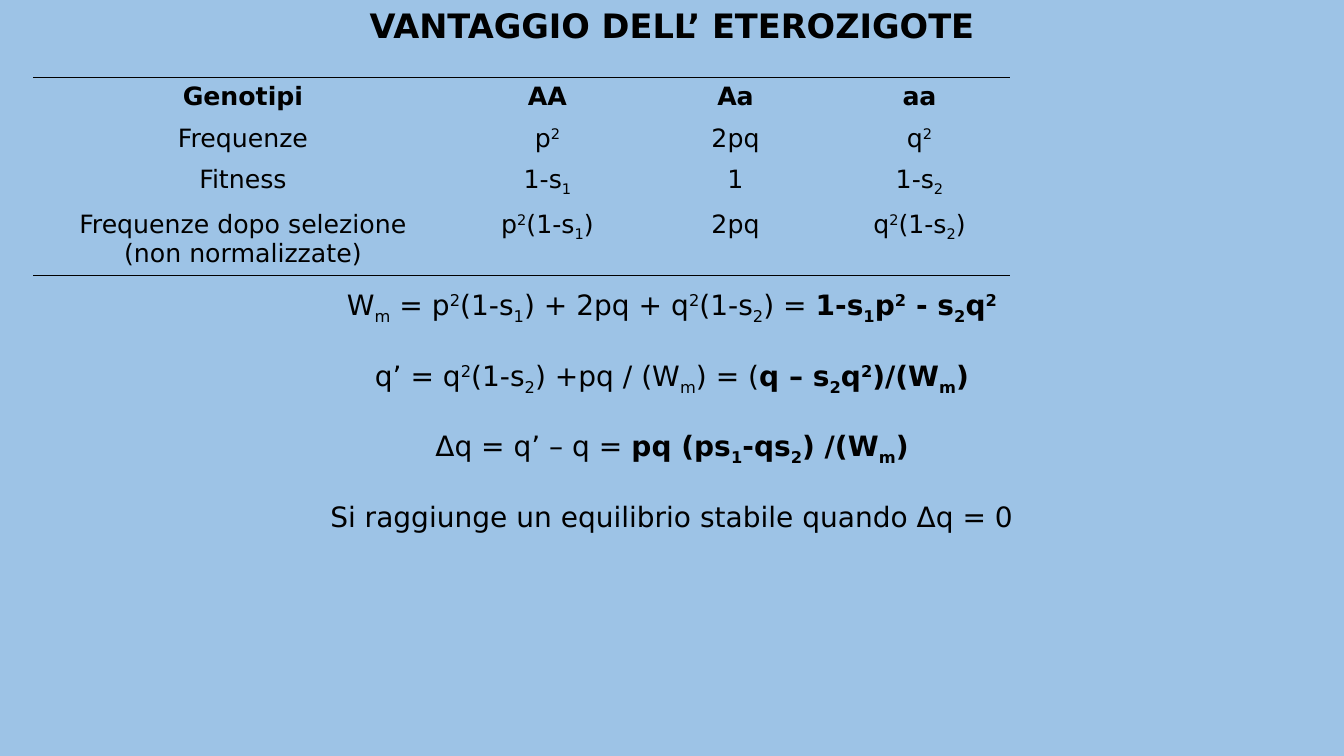
import pptx
import pptx.dml.color
import pptx.enum.text
import pptx.oxml
import pptx.oxml.ns
import pptx.util

Inches, Pt = pptx.util.Inches, pptx.util.Pt

# Markup: ^ raises the next character, _ lowers it, * switches bold on or off.
TITLE = "*VANTAGGIO DELL’ ETEROZIGOTE"
GENOTYPES = [
    ["*Genotipi", "*AA", "*Aa", "*aa"],
    ["Frequenze", "p^2", "2pq", "q^2"],
    ["Fitness", "1-s_1", "1", "1-s_2"],
    ["Frequenze dopo selezione\n(non normalizzate)", "p^2(1-s_1)", "2pq", "q^2(1-s_2)"],
]
EQUATIONS = [
    "W_m = p^2(1-s_1) + 2pq + q^2(1-s_2) = *1-s_1p^2 - s_2q^2",
    "q’ = q^2(1-s_2) +pq / (W_m) = (*q – s_2q^2)/(W_m)",
    "Δq = q’ – q = *pq (ps_1-qs_2) /(W_m)",
    "Si raggiunge un equilibrio stabile quando Δq = 0",
]
THEME = {
    "background": "9DC3E6", "ink": "000000", "font": "DejaVu Sans",
    "title": 24, "table": 18, "equation": 20, "rule": 1, "equation_gap": 23.3,
}
SLIDE_WIDTH, SLIDE_HEIGHT = 13.33, 7.5
COLUMN_WIDTHS = [4.16, 1.88, 1.85, 1.8]
ROW_HEIGHT = 0.41
RULED_SIDES = {0: ("T", "B"), len(GENOTYPES) - 1: ("B",)}
BASELINES = {"^": "30000", "_": "-25000"}


def split_markup(line):
    """Return (text, bold, baseline) pieces of one marked-up line."""
    pieces, bold, baseline = [], False, None
    for char in line:
        if char == "*":
            bold = not bold
        elif char in BASELINES:
            baseline = BASELINES[char]
        else:
            if pieces and baseline is None and pieces[-1][1:] == (bold, None):
                pieces[-1] = (pieces[-1][0] + char, bold, None)
            else:
                pieces.append((char, bold, baseline))
            baseline = None
    return pieces


def write_lines(frame, lines, size, gap=0):
    for index, line in enumerate(lines):
        paragraph = frame.paragraphs[0] if index == 0 else frame.add_paragraph()
        paragraph.alignment = pptx.enum.text.PP_ALIGN.CENTER
        if index and gap:
            paragraph.space_before = Pt(gap)
        for text, bold, baseline in split_markup(line):
            run = paragraph.add_run()
            run.text = text
            formats = {"name": THEME["font"], "size": Pt(size), "bold": bold}
            for key, value in formats.items():
                setattr(run.font, key, value)
            run.font.color.rgb = pptx.dml.color.RGBColor.from_string(THEME["ink"])
            if baseline:
                run.font._element.set("baseline", baseline)


def add_text(slide, top, height, lines, size, gap=0):
    box = slide.shapes.add_textbox(
        Inches(0), Inches(top), Inches(SLIDE_WIDTH), Inches(height))
    box.text_frame.word_wrap = True
    write_lines(box.text_frame, lines, size, gap)


def rule_cell(cell, ruled):
    properties = cell._tc.get_or_add_tcPr()
    for side in "LRTB":
        paint = "<a:noFill/>"
        if side in ruled:
            paint = f'<a:solidFill><a:srgbClr val="{THEME["ink"]}"/></a:solidFill>'
        properties.append(pptx.oxml.parse_xml(
            f'<a:ln{side} {pptx.oxml.ns.nsdecls("a")} w="{Pt(THEME["rule"])}">'
            f"{paint}</a:ln{side}>"))
    cell.fill.background()


def add_genotypes(slide):
    table = slide.shapes.add_table(
        len(GENOTYPES), len(COLUMN_WIDTHS), Inches(0.33), Inches(0.77),
        Inches(sum(COLUMN_WIDTHS)), Inches(ROW_HEIGHT * len(GENOTYPES))).table
    table.first_row = table.horz_banding = False
    for column, width in zip(table.columns, COLUMN_WIDTHS):
        column.width = Inches(width)
    for r, values in enumerate(GENOTYPES):
        table.rows[r].height = Inches(ROW_HEIGHT)
        for c, value in enumerate(values):
            cell = table.cell(r, c)
            write_lines(cell.text_frame, value.split("\n"), THEME["table"])
            rule_cell(cell, RULED_SIDES.get(r, ()))


def main():
    deck = pptx.Presentation()
    deck.slide_width, deck.slide_height = Inches(SLIDE_WIDTH), Inches(SLIDE_HEIGHT)
    slide = deck.slides.add_slide(deck.slide_layouts[6])
    fill = slide.background.fill
    fill.solid()
    fill.fore_color.rgb = pptx.dml.color.RGBColor.from_string(THEME["background"])
    add_text(slide, 0, 0.5, [TITLE], THEME["title"])
    add_genotypes(slide)
    add_text(slide, 2.8, 2.47, EQUATIONS, THEME["equation"], THEME["equation_gap"])
    deck.save("out.pptx")


if __name__ == "__main__":
    main()
